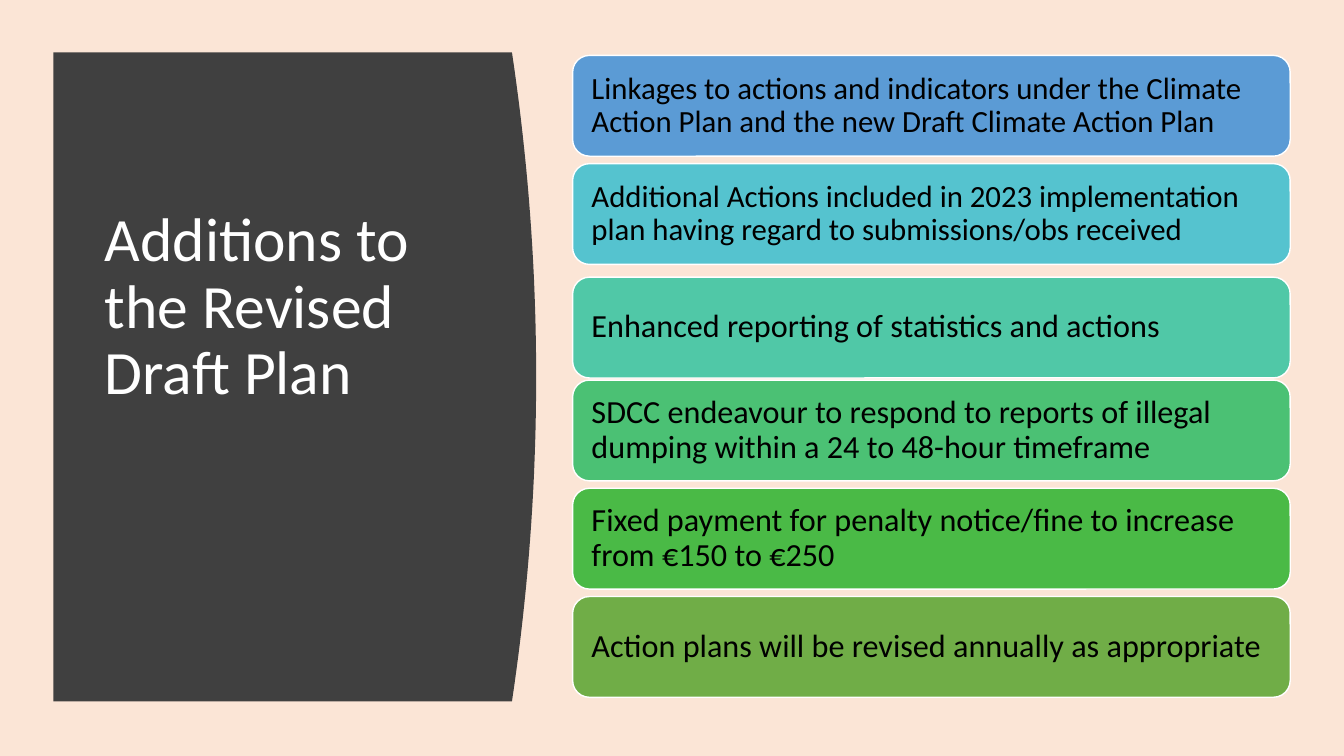
import pptx
import pptx.dml.color
import pptx.enum.shapes
import pptx.enum.text
import pptx.util

Pt = pptx.util.Pt
FONT = "Calibri"
COLOURS = {
    "background": "FBE5D6",
    "panel": "404040",
    "title": "FFFFFF",
    "outline": "FFFFFF",
    "text": "000000",
    "blue": "5B9BD5",
    "cyan": "55C3CF",
    "teal": "50C8A7",
    "mint": "4BC174",
    "green": "4ABA46",
    "olive": "70AD47",
}

# Wording, colour, text size and downward nudge of each addition
ADDITIONS = [
    ("Linkages to actions and indicators under the Climate Action Plan "
     "and the new Draft Climate Action Plan", "blue", 22, 0),
    ("Additional Actions included in 2023 implementation plan having regard "
     "to submissions/obs received", "cyan", 22, 0),
    ("Enhanced reporting of statistics and actions", "teal", 23, 3.8),
    ("SDCC endeavour to respond to reports of illegal dumping within "
     "a 24 to 48-hour timeframe", "mint", 23, 0),
    ("Fixed payment for penalty notice/fine to increase from €150 to €250",
     "green", 23, 0),
    ("Action plans will be revised annually as appropriate", "olive", 23, 0),
]
CARD_LEFT, CARD_TOP, CARD_WIDTH, CARD_HEIGHT = 409, 39.6, 512.6, 72
CARD_PITCH = 77.3


def colour(name):
    return pptx.dml.color.RGBColor.from_string(COLOURS[name])


def paint(fill, name):
    fill.solid()
    fill.fore_color.rgb = colour(name)


def write(frame, wording, size, name, insets):
    """Left-aligned, vertically centred text; insets run left, top, right, bottom."""
    frame.text = wording
    frame.word_wrap = True
    frame.auto_size = pptx.enum.text.MSO_AUTO_SIZE.NONE
    frame.vertical_anchor = pptx.enum.text.MSO_ANCHOR.MIDDLE
    (frame.margin_left, frame.margin_top,
     frame.margin_right, frame.margin_bottom) = map(Pt, insets)
    paragraph = frame.paragraphs[0]
    paragraph.alignment = pptx.enum.text.PP_ALIGN.LEFT
    paragraph.line_spacing = 0.9
    paragraph.font.name = FONT
    paragraph.font.size = Pt(size)
    paragraph.font.color.rgb = colour(name)


def add_panel(slide):
    """Dark panel whose right edge bulges as a parabola."""
    left, top, bottom, tip, bulge = 38.2, 37.4, 501.1, 383, 17.3
    steps = 40
    edge = []
    for step in range(steps + 1):
        offset = 2 * step / steps - 1
        edge.append((Pt(tip - bulge * offset ** 2),
                     Pt(top + (bottom - top) * step / steps)))
    outline = slide.shapes.build_freeform(Pt(left), Pt(top))
    outline.add_line_segments(edge + [(Pt(left), Pt(bottom))], close=True)
    panel = outline.convert_to_shape()
    panel.shadow.inherit = False
    paint(panel.fill, "panel")
    panel.line.fill.background()
    return panel


def add_title(slide, wording):
    title = slide.shapes.title
    title.left, title.top, title.width, title.height = map(
        Pt, (67.7, 79.9, 269.3, 377.3))
    # The deep bottom inset lifts the heading above the panel's middle
    write(title.text_frame, wording, 44, "title", (7.2, 3.6, 7.2, 100))
    return title


def add_card(slide, top, wording, fill, size):
    card = slide.shapes.add_shape(
        pptx.enum.shapes.MSO_SHAPE.ROUNDED_RECTANGLE,
        Pt(CARD_LEFT), Pt(top), Pt(CARD_WIDTH), Pt(CARD_HEIGHT))
    card.shadow.inherit = False
    paint(card.fill, fill)
    card.line.color.rgb = colour("outline")
    card.line.width = Pt(1)
    write(card.text_frame, wording, size, "text", (10, 10, 10, 10))


def main():
    deck = pptx.Presentation()
    deck.slide_width, deck.slide_height = Pt(960), Pt(540)
    slide = deck.slides.add_slide(deck.slide_layouts.get_by_name("Title Only"))
    paint(slide.background.fill, "background")

    # Heading on the dark panel
    title = add_title(slide, "Additions to the Revised Draft Plan")
    panel = add_panel(slide)
    title.element.addprevious(panel.element)

    # Column of additions
    for row, (wording, fill, size, nudge) in enumerate(ADDITIONS):
        add_card(slide, CARD_TOP + row * CARD_PITCH + nudge, wording, fill, size)

    deck.save("out.pptx")


if __name__ == "__main__":
    main()
